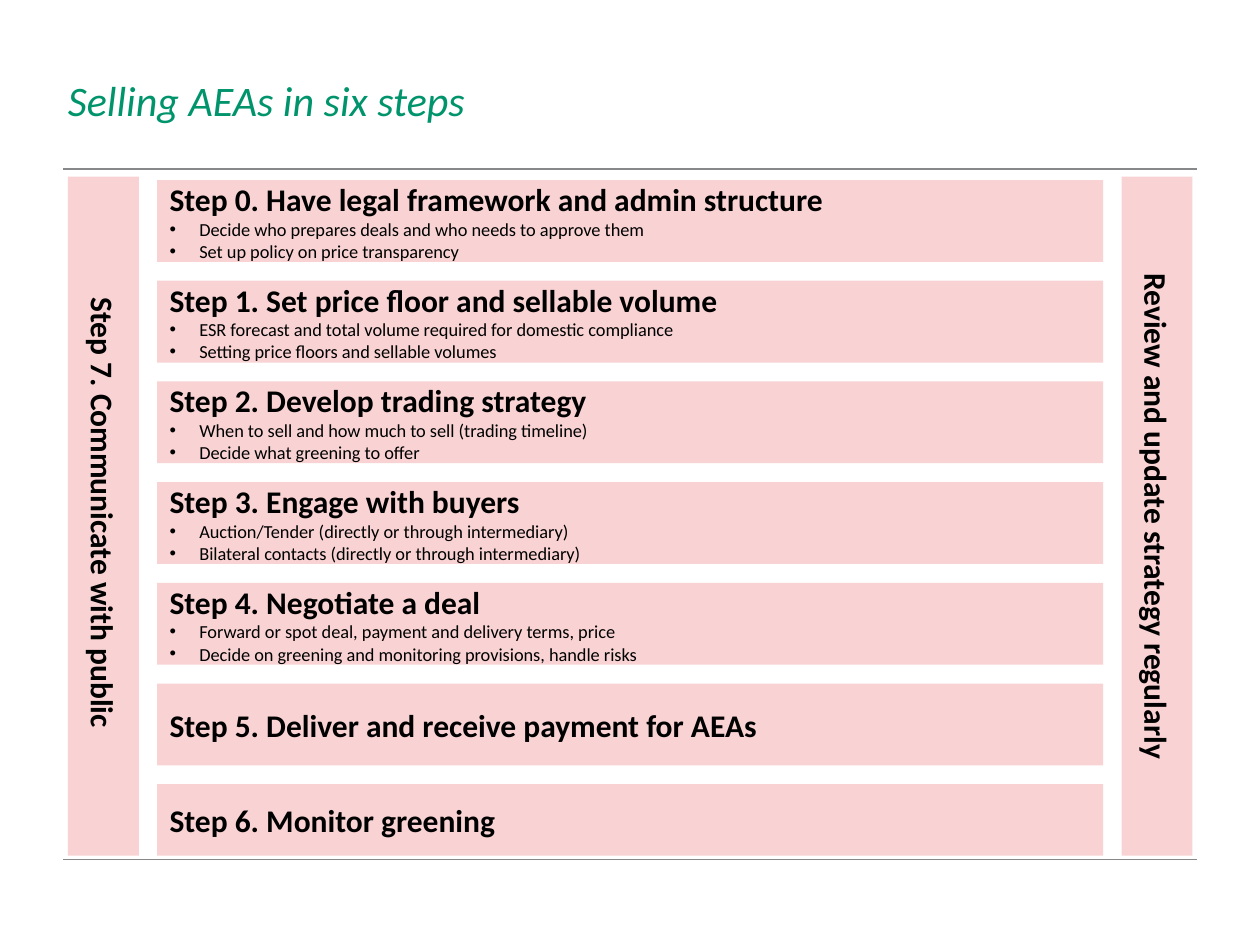
import lxml.etree
import pptx
import pptx.dml.color
import pptx.enum.shapes
import pptx.enum.text
import pptx.oxml.ns
import pptx.util
from pptx.util import Cm

FONT = "Calibri"
PINK, GREEN, GREY, BLACK = "F9D3D3", "00946C", "87888A", "000000"
STEPS = [
    ("Step 0. Have legal framework and admin structure",
     ["Decide who prepares deals and who needs to approve them",
      "Set up policy on price transparency"]),
    ("Step 1. Set price floor and sellable volume",
     ["ESR forecast and total volume required for domestic compliance",
      "Setting price floors and sellable volumes"]),
    ("Step 2. Develop trading strategy",
     ["When to sell and how much to sell (trading timeline)",
      "Decide what greening to offer"]),
    ("Step 3. Engage with buyers",
     ["Auction/Tender (directly or through intermediary)",
      "Bilateral contacts (directly or through intermediary)"]),
    ("Step 4. Negotiate a deal",
     ["Forward or spot deal, payment and delivery terms, price",
      "Decide on greening and monitoring provisions, handle risks"]),
    ("Step 5. Deliver and receive payment for AEAs", []),
    ("Step 6. Monitor greening", []),
]
STEP_TOP, STEP_PITCH, STEP_HEIGHT, STEPS_BOTTOM = 3.63, 2.03, 1.65, 17.25


def rgb(color):
    """Turn a hex string into a colour."""
    return pptx.dml.color.RGBColor.from_string(color)


def add_run(p, text, size, color=BLACK, bold=False, italic=False):
    """Append a formatted run to a paragraph."""
    r = p.add_run()
    r.text = text
    r.font.name = FONT
    r.font.size = pptx.util.Pt(size)
    r.font.color.rgb = rgb(color)
    r.font.bold = bold
    r.font.italic = italic


def set_bullet(p):
    """Give a paragraph a hanging round bullet."""
    pPr = p._p.get_or_add_pPr()
    pPr.set("marL", str(Cm(0.6)))
    pPr.set("indent", str(-Cm(0.6)))
    qn = pptx.oxml.ns.qn
    lxml.etree.SubElement(pPr, qn("a:buFont")).set("typeface", "Arial")
    lxml.etree.SubElement(pPr, qn("a:buChar")).set("char", "•")


def set_title(s, text):
    """Place and format the slide title."""
    sp = s.shapes.title
    sp.left, sp.top, sp.width, sp.height = Cm(1.37), Cm(1.5), Cm(18.72), Cm(0.79)
    tf = sp.text_frame
    tf.margin_left = tf.margin_right = tf.margin_top = tf.margin_bottom = 0
    tf.vertical_anchor = pptx.enum.text.MSO_ANCHOR.TOP
    tf.auto_size = pptx.enum.text.MSO_AUTO_SIZE.NONE
    p = tf.paragraphs[0]
    p.alignment = pptx.enum.text.PP_ALIGN.LEFT
    add_run(p, text, 24, GREEN, italic=True)


def add_rule(s, y):
    """Draw a thin horizontal rule across the slide."""
    line = s.shapes.add_connector(
        pptx.enum.shapes.MSO_CONNECTOR.STRAIGHT, Cm(1.27), Cm(y), Cm(24.13), Cm(y))
    line.line.color.rgb = rgb(GREY)
    line.line.width = pptx.util.Pt(1)
    lxml.etree.SubElement(line._element.spPr, pptx.oxml.ns.qn("a:effectLst"))


def add_box(s, left, top, width, height, heading, align):
    """Add a pink box with a bold heading and return its text frame."""
    sp = s.shapes.add_shape(pptx.enum.shapes.MSO_SHAPE.RECTANGLE,
                            Cm(left), Cm(top), Cm(width), Cm(height))
    sp.shadow.inherit = False
    sp.fill.solid()
    sp.fill.fore_color.rgb = rgb(PINK)
    sp.line.fill.background()
    tf = sp.text_frame
    tf.word_wrap = True
    tf.vertical_anchor = pptx.enum.text.MSO_ANCHOR.MIDDLE
    p = tf.paragraphs[0]
    p.alignment = align
    add_run(p, heading, 18, bold=True)
    return tf


def add_step(s, top, height, heading, bullets):
    """Add one step with its bullet points."""
    left = pptx.enum.text.PP_ALIGN.LEFT
    tf = add_box(s, 3.17, top, 19.07, height, heading, left)
    for text in bullets:
        p = tf.add_paragraph()
        p.alignment = left
        set_bullet(p)
        add_run(p, text, 10.5)


def add_side_bar(s, left, text):
    """Add a tall bar with text turned to run downwards."""
    tf = add_box(s, left, 3.56, 1.43, 13.69, text, pptx.enum.text.PP_ALIGN.CENTER)
    tf.margin_left = tf.margin_right = Cm(0.25)
    tf.margin_top = tf.margin_bottom = Cm(0.18)
    tf._txBody.bodyPr.set("vert", "vert")


def main():
    """Build the slide and save it."""
    prs = pptx.Presentation()
    prs.slide_width, prs.slide_height = Cm(25.4), Cm(19.05)
    s = prs.slides.add_slide(prs.slide_layouts[5])
    set_title(s, "Selling AEAs in six steps")
    for y in (3.4, 17.33):
        add_rule(s, y)
    for i, (heading, bullets) in enumerate(STEPS):
        top = STEP_TOP + i * STEP_PITCH
        height = min(STEP_HEIGHT, STEPS_BOTTOM - top)
        add_step(s, top, height, heading, bullets)
    add_side_bar(s, 1.37, "Step 7. Communicate with public ")
    add_side_bar(s, 22.61, "Review and update strategy regularly")
    prs.save("out.pptx")


if __name__ == "__main__":
    main()
